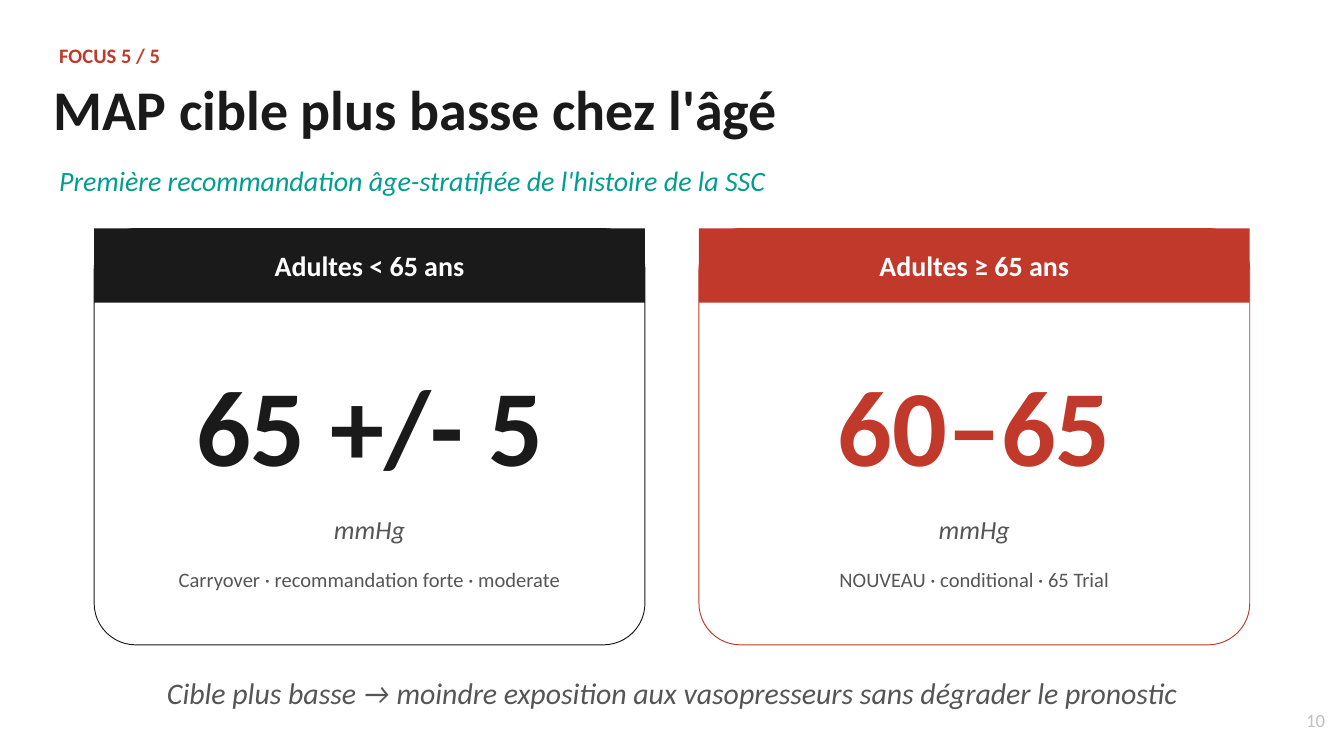
import pptx
import pptx.util
import pptx.dml.color
import pptx.enum.shapes
import pptx.enum.text
from pptx.util import Cm

# Content
FOCUS = "FOCUS 5 / 5"
TITLE = "MAP cible plus basse chez l'âgé"
SUBTITLE = "Première recommandation âge-stratifiée de l'histoire de la SSC"
TARGETS = [
    {"group": "Adultes < 65 ans", "value": "65 +/- 5", "unit": "mmHg",
     "evidence": "Carryover · recommandation forte · moderate", "color": "ink"},
    {"group": "Adultes ≥ 65 ans", "value": "60–65", "unit": "mmHg",
     "evidence": "NOUVEAU · conditional · 65 Trial", "color": "red"},
]
CONCLUSION = "Cible plus basse → moindre exposition aux vasopresseurs sans dégrader le pronostic"
PAGE_NUMBER = "10"

THEME = {
    "font": "Calibri",
    "colors": {"ink": "1A1A1A", "red": "C0392B", "teal": "009E8E",
               "gray": "555555", "pale": "C0C0C0", "white": "FFFFFF"},
    "sizes": {"label": 11, "title": 30, "subtitle": 15, "group": 15, "value": 58,
              "unit": 14, "conclusion": 16, "page": 10},
}

# Layout, in centimetres
MARGIN = 1.02
CARD_LEFT, CARD_TOP, CARD_WIDTH, CARD_HEIGHT = 1.78, 4.32, 10.41, 7.87
CARD_GAP = 1.02
HEADER_HEIGHT = 1.4

ALIGN = pptx.enum.text.PP_ALIGN
ANCHOR = pptx.enum.text.MSO_ANCHOR
SHAPES = pptx.enum.shapes.MSO_SHAPE


def rgb(color):
    return pptx.dml.color.RGBColor.from_string(THEME["colors"][color])


def write(box, text, size, color, bold=False, italic=False, align=ALIGN.LEFT,
          anchor=ANCHOR.TOP, insets=(0.1, 0.05), wrap=True):
    frame = box.text_frame
    frame.text = text
    frame.word_wrap = wrap
    frame.auto_size = pptx.enum.text.MSO_AUTO_SIZE.SHAPE_TO_FIT_TEXT
    frame.vertical_anchor = anchor
    frame.margin_left = frame.margin_right = Cm(insets[0])
    frame.margin_top = frame.margin_bottom = Cm(insets[1])
    paragraph = frame.paragraphs[0]
    paragraph.alignment = align
    font = paragraph.font
    font.name = THEME["font"]
    font.size = pptx.util.Pt(THEME["sizes"][size])
    font.color.rgb = rgb(color)
    font.bold, font.italic = bold, italic


def add_text(slide, place, text, size, color, **style):
    box = slide.shapes.add_textbox(*map(Cm, place))
    write(box, text, size, color, **style)


def add_panel(slide, kind, place, fill, outline=None):
    panel = slide.shapes.add_shape(kind, *map(Cm, place))
    panel.shadow.inherit = False
    panel.fill.solid()
    panel.fill.fore_color.rgb = rgb(fill)
    if outline:
        panel.line.color.rgb = rgb(outline)
        panel.line.width = pptx.util.Pt(0.5)
    else:
        panel.line.fill.background()
    return panel


def add_card(slide, left, target):
    color = target["color"]
    body = add_panel(slide, SHAPES.ROUNDED_RECTANGLE,
                     (left, CARD_TOP, CARD_WIDTH, CARD_HEIGHT), "white", color)
    body.adjustments[0] = 0.1
    add_panel(slide, SHAPES.RECTANGLE, (left, CARD_TOP, CARD_WIDTH, HEADER_HEIGHT), color)

    # Part, top, height, size, colour, style
    rows = [
        ("group", 4.65, 0.74, "group", "white", {"bold": True, "anchor": ANCHOR.MIDDLE}),
        ("value", 6.71, 2.59, "value", color, {"bold": True, "anchor": ANCHOR.MIDDLE}),
        ("unit", 9.65, 0.71, "unit", "gray", {"italic": True}),
        ("evidence", 10.67, 0.58, "label", "gray", {}),
    ]
    for part, top, height, size, ink, style in rows:
        add_text(slide, (left, top, CARD_WIDTH, height), target[part], size, ink,
                 align=ALIGN.CENTER, **style)


def main():
    deck = pptx.Presentation()
    deck.slide_width, deck.slide_height = Cm(25.4), Cm(14.29)
    slide = deck.slides.add_slide(deck.slide_layouts.get_by_name("Title Only"))

    # Heading
    add_text(slide, (MARGIN, 0.76, 7.62, 0.58), FOCUS, "label", "red", bold=True)
    title = slide.shapes.title
    title.left, title.top, title.width, title.height = map(Cm, (MARGIN, 1.4, 13.82, 1.27))
    write(title, TITLE, "title", "ink", bold=True, insets=(0, 0), wrap=False)
    add_text(slide, (MARGIN, 3.05, 22.86, 0.74), SUBTITLE, "subtitle", "teal", italic=True)

    # Target cards
    for index, target in enumerate(TARGETS):
        add_card(slide, CARD_LEFT + index * (CARD_WIDTH + CARD_GAP), target)

    # Conclusion and page number
    add_text(slide, (MARGIN, 12.7, 23.37, 0.79), CONCLUSION, "conclusion", "gray",
             italic=True, align=ALIGN.CENTER)
    add_text(slide, (24.38, 13.34, 0.76, 0.53), PAGE_NUMBER, "page", "pale",
             align=ALIGN.RIGHT)

    deck.save("out.pptx")


if __name__ == "__main__":
    main()
